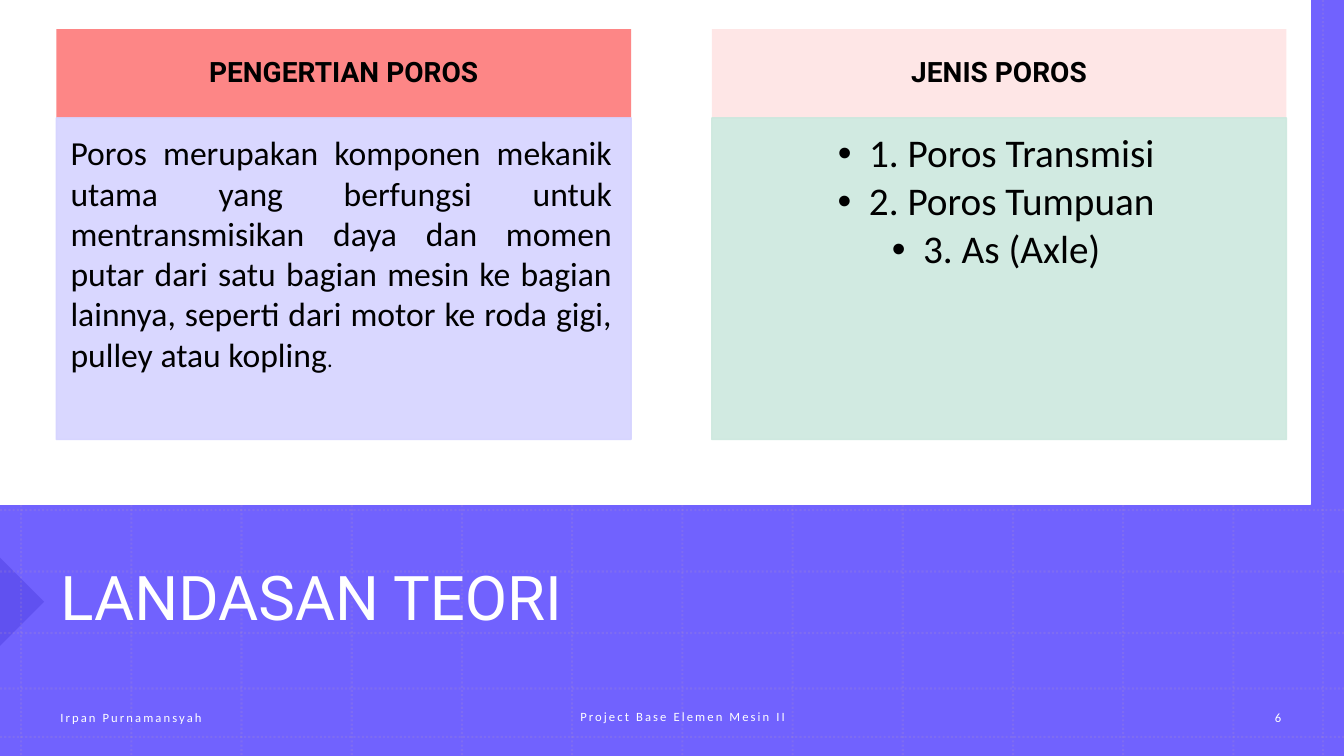
from lxml import etree
from pptx import Presentation
from pptx import util as u
from pptx.dml.color import RGBColor
from pptx.enum import dml, shapes, text
from pptx.oxml.ns import qn

WIDTH, HEIGHT = 13.33, 7.5
PURPLE, WHITE, BLACK, GRID = "7162FE", "FFFFFF", "000000", "B495C2"
CENTER, JUSTIFY, LEFT = text.PP_ALIGN.CENTER, text.PP_ALIGN.JUSTIFY, text.PP_ALIGN.LEFT
MIDDLE, TOP = text.MSO_ANCHOR.MIDDLE, text.MSO_ANCHOR.TOP


def paint(shape, fill, color, opacity=100):
    """Give a fill (or a line's fill) of the shape a colour; fill first, then line."""
    fill.solid()
    fill.fore_color.rgb = RGBColor.from_string(color)
    if opacity < 100:
        color_element = list(shape.element.iter(qn("a:srgbClr")))[-1]
        etree.SubElement(color_element, qn("a:alpha")).set("val", str(opacity * 1000))


def add_run(paragraph, words, size, font, color, bold=False, spacing=0):
    run = paragraph.add_run()
    run.text = words
    run.font.size = u.Pt(size)
    run.font.name = font
    run.font.bold = bold
    run.font.color.rgb = RGBColor.from_string(color)
    if spacing:
        run.font._element.set("spc", str(int(spacing * 100)))


presentation = Presentation()
presentation.slide_width = u.Inches(WIDTH)
presentation.slide_height = u.Inches(HEIGHT)
slide = presentation.slides.add_slide(presentation.slide_layouts[5])

# Purple ground and the arrow tip at the left edge
for kind, left, top, width, height, color, opacity, turn in (
    (shapes.MSO_SHAPE.RECTANGLE, 0, 0, WIDTH, HEIGHT, PURPLE, 100, 0),
    (shapes.MSO_SHAPE.RIGHT_TRIANGLE, -0.31, 5.66, 0.62, 0.62, "1201AF", 17, 225),
):
    shape = slide.shapes.add_shape(
        kind, u.Inches(left), u.Inches(top), u.Inches(width), u.Inches(height))
    shape.shadow.inherit = False
    shape.rotation = turn
    paint(shape, shape.fill, color, opacity)
    shape.line.fill.background()

# Dotted grid: even columns plus one at the right edge, rows below the wave
columns = [0.21 + 1.093 * i for i in range(12)] + [13.12]
rows = [5.06 + 0.61 * i for i in range(3)] + [6.83, 7.31]
grid_lines = [(x, 0, x, HEIGHT) for x in columns] + [(0, y, WIDTH, y) for y in rows]
for ends in grid_lines:
    line = slide.shapes.add_connector(
        shapes.MSO_CONNECTOR.STRAIGHT, *[u.Inches(end) for end in ends])
    paint(line, line.line.fill, GRID, 20)
    line.line.width = u.Pt(1.5)
    line.line.dash_style = dml.MSO_LINE.ROUND_DOT
    etree.SubElement(line.element.spPr, qn("a:effectLst"))

# White upper area whose lower edge follows a cubic curve
curve = ((13.35, 4.74), (6.7, 4.74), (6.66, 5.45), (0, 5.04))
edge = []
for step in range(61):
    t = step / 60
    weights = ((1 - t) ** 3, 3 * t * (1 - t) ** 2, 3 * t * t * (1 - t), t ** 3)
    edge.append(tuple(sum(w * point[axis] for w, point in zip(weights, curve))
                      for axis in (0, 1)))
builder = slide.shapes.build_freeform(0, -0.03, scale=u.Inches(1))
builder.add_line_segments([(13.35, -0.03)] + edge, close=True)
wave = builder.convert_to_shape()
wave.shadow.inherit = False
paint(wave, wave.fill, WHITE)
paint(wave, wave.line.fill, WHITE)
wave.line.width = u.Pt(1)

# Title, brought in front of the ground
title = slide.shapes.title
title.element.getparent().append(title.element)
title.left, title.top = u.Inches(0.5), u.Inches(5.09)
title.width, title.height = u.Inches(11.75), u.Inches(1.74)
title.text_frame.vertical_anchor = MIDDLE
paragraph = title.text_frame.paragraphs[0]
paragraph.alignment = LEFT
paragraph.line_spacing = 0.9
add_run(paragraph, "LANDASAN TEORI", 44, "Roboto", WHITE)

# Footer
for words, left, top, width, alignment in (
    ("Irpan Purnamansyah", 0.5, 6.92, 2.8, LEFT),
    ("Project Base Elemen Mesin II", 4.59, 6.91, 4.36, CENTER),
    ("6", 12.24, 6.92, 0.87, CENTER),
):
    box = slide.shapes.add_textbox(
        u.Inches(left), u.Inches(top), u.Inches(width), u.Inches(0.4))
    box.text_frame.word_wrap = True
    box.text_frame.vertical_anchor = MIDDLE
    paragraph = box.text_frame.paragraphs[0]
    paragraph.alignment = alignment
    add_run(paragraph, words, 9, "Calibri", WHITE, spacing=1.5)

# Two cards, each a header above a body; a paragraph is a list of (words, size)
definition = [[
    ("Poros merupakan komponen mekanik utama yang berfungsi untuk mentransmisikan "
     "daya dan momen putar dari satu bagian mesin ke bagian lainnya, seperti dari "
     "motor ke roda gigi, pulley atau kopling", 24),
    (".", 16),
]]
kinds = [[(words, 28)] for words in
         ("1. Poros Transmisi", "2. Poros Tumpuan", "3. As (Axle)")]
header_insets = (0.16, 0.09, 0.16, 0.09)
cards = (
    ("PENGERTIAN POROS", 100, definition, "D5D3FF", JUSTIFY, 1.0, False,
     (0.14, 0.14, 0.19, 0.21)),
    ("JENIS POROS", 20, kinds, "CCE8DE", CENTER, 0.9, True,
     (0.16, 0.16, 0.22, 0.24)),
)
for column, (heading, strength, body, color, alignment, spacing, bulleted,
             body_insets) in enumerate(cards):
    parts = (
        (0.29, 0.88, "FD8686", strength, [[(heading, 20)]], "Roboto", CENTER, 0.9,
         False, MIDDLE, header_insets, 7),
        (1.17, 3.19, color, 90, body, "Calibri", alignment, spacing,
         bulleted, TOP, body_insets, 4),
    )
    for (top, height, fill, opacity, paragraphs, font, align, line_spacing,
         bullets, anchor, insets, after) in parts:
        panel = slide.shapes.add_shape(
            shapes.MSO_SHAPE.RECTANGLE, u.Inches(0.56 + 6.5 * column), u.Inches(top),
            u.Inches(5.7), u.Inches(height))
        panel.shadow.inherit = False
        paint(panel, panel.fill, fill, opacity)
        if anchor == TOP:
            paint(panel, panel.line.fill, fill, opacity)
            panel.line.width = u.Pt(1)
        else:
            panel.line.fill.background()

        frame = panel.text_frame
        frame.word_wrap = True
        frame.vertical_anchor = anchor
        (frame.margin_left, frame.margin_top,
         frame.margin_right, frame.margin_bottom) = map(u.Inches, insets)
        for index, runs in enumerate(paragraphs):
            paragraph = frame.add_paragraph() if index else frame.paragraphs[0]
            paragraph.alignment = align
            paragraph.line_spacing = line_spacing
            paragraph.space_after = u.Pt(after)
            if bullets:
                properties = paragraph._p.get_or_add_pPr()
                properties.set("marL", str(u.Inches(0.31)))
                properties.set("indent", str(-u.Inches(0.31)))
                etree.SubElement(properties, qn("a:buFont")).set("typeface", "Arial")
                etree.SubElement(properties, qn("a:buChar")).set("char", "•")
            for words, size in runs:
                add_run(paragraph, words, size, font, BLACK, bold=font == "Roboto")

presentation.save("out.pptx")
